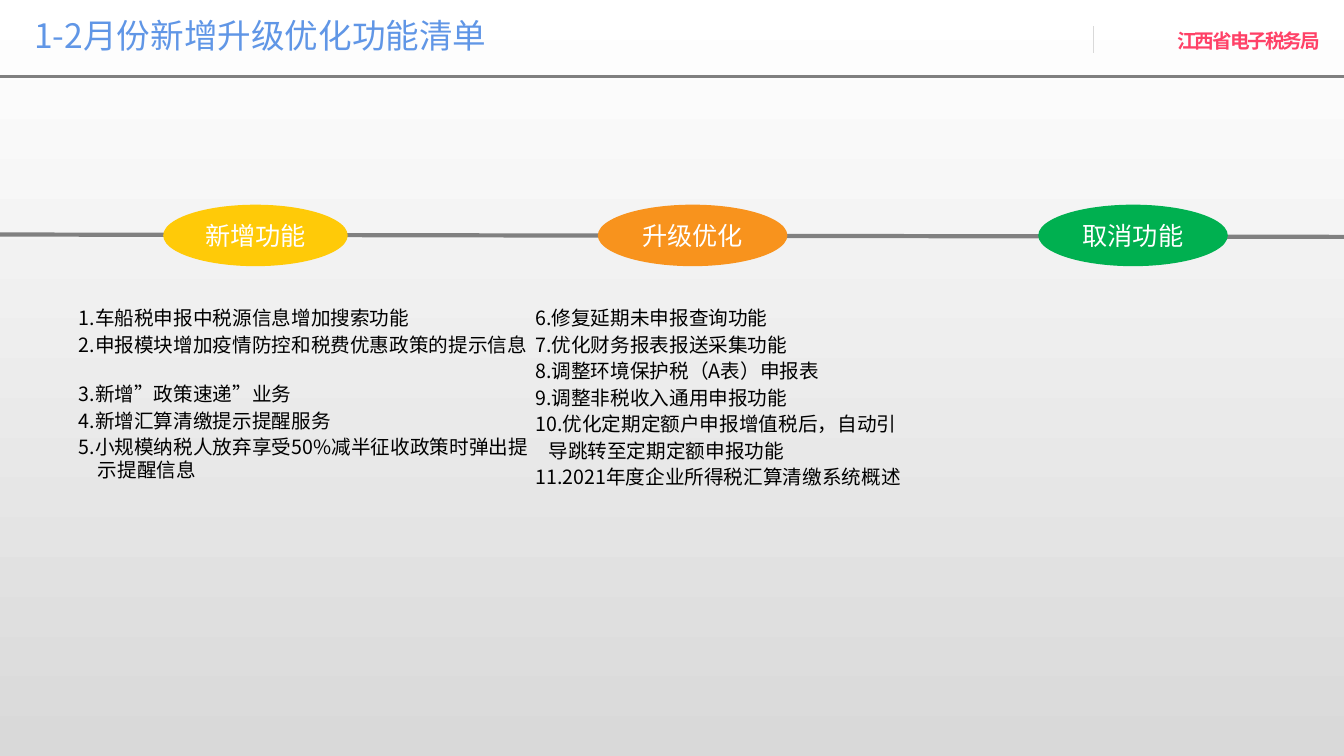
"""Build the list slide of features added and upgraded in January and February."""
from pptx import Presentation
from pptx.dml.color import RGBColor
from pptx.enum import shapes, text
from pptx.oxml import xmlchemy
from pptx.util import Pt

BLUE = RGBColor(0x60, 0x96, 0xE6)
PINK = RGBColor(0xFF, 0x41, 0x67)
YELLOW = RGBColor(0xFF, 0xCA, 0x08)
ORANGE = RGBColor(0xF8, 0x93, 0x1D)
GREEN = RGBColor(0x00, 0xB0, 0x50)
GRAY = RGBColor(0x80, 0x80, 0x80)
LIGHT_GRAY = RGBColor(0xD9, 0xD9, 0xD9)
WHITE = RGBColor(0xFF, 0xFF, 0xFF)
BLACK = RGBColor(0, 0, 0)
CJK_FONT = "Noto Sans CJK SC"

TITLE = "1-2月份新增升级优化功能清单"
OFFICE = "江西省电子税务局"
LINES = [
    ((0, 54.7), (960, 54.7), GRAY, 2),
    ((781.2, 18.7), (781.2, 38.2), LIGHT_GRAY, 0.5),
    ((-3.6, 167.5), (960, 169.2), GRAY, 3),
]
STAGES = [
    ("新增功能", 116.6, 131.8, YELLOW),
    ("升级优化", 427, 135.4, ORANGE),
    ("取消功能", 741.6, 135.4, GREEN),
]
HANGING = (13.7, -13.7)
CONTINUED = (9.4, 0)
GAP = 2.6
WIDE_GAP = 19
LISTS = [
    (49, 340.6, 5, [
        ("1.车船税申报中税源信息增加搜索功能", HANGING, GAP),
        ("2.申报模块增加疫情防控和税费优惠政策的提示信息", HANGING, WIDE_GAP),
        ("3.新增”政策速递”业务", HANGING, GAP),
        ("4.新增汇算清缴提示提醒服务", HANGING, GAP),
        ("5.小规模纳税人放弃享受50%减半征收政策时弹出提示提醒信息", HANGING, GAP),
    ]),
    (375.1, 285.8, 7.2, [
        ("6.修复延期未申报查询功能", HANGING, GAP),
        ("7.优化财务报表报送采集功能", HANGING, GAP),
        ("8.调整环境保护税（A表）申报表", HANGING, GAP),
        ("9.调整非税收入通用申报功能", HANGING, GAP),
        ("10.优化定期定额户申报增值税后，自动引", HANGING, GAP),
        ("导跳转至定期定额申报功能", CONTINUED, GAP),
        ("11.2021年度企业所得税汇算清缴系统概述", HANGING, GAP),
    ]),
]


def place(shape, left, top, width, height):
    shape.left, shape.top = Pt(left), Pt(top)
    shape.width, shape.height = Pt(width), Pt(height)


def set_insets(frame, left, top, right, bottom):
    frame.margin_left, frame.margin_top = Pt(left), Pt(top)
    frame.margin_right, frame.margin_bottom = Pt(right), Pt(bottom)


def set_font(paragraph, name, size, color, bold=False):
    font = paragraph.font
    font.name, font.size, font.bold = name, Pt(size), bold
    font.color.rgb = color


def add_line(slide, start, end, color, width):
    line = slide.shapes.add_connector(
        shapes.MSO_CONNECTOR.STRAIGHT, *map(Pt, start), *map(Pt, end))
    line.line.color.rgb = color
    line.line.width = Pt(width)
    properties = line._element.spPr
    properties.append(xmlchemy.OxmlElement("a:effectLst"))


def add_stage(slide, label, left, width, color):
    ellipse = slide.shapes.add_shape(
        shapes.MSO_SHAPE.OVAL, Pt(left), Pt(146.2), Pt(width), Pt(43.9))
    ellipse.shadow.inherit = False
    ellipse.fill.solid()
    ellipse.fill.fore_color.rgb = color
    ellipse.line.fill.background()
    frame = ellipse.text_frame
    set_insets(frame, 0, 0, 0, 0)
    frame.vertical_anchor = text.MSO_ANCHOR.MIDDLE
    paragraph = frame.paragraphs[0]
    paragraph.text = label
    paragraph.alignment = text.PP_ALIGN.CENTER
    set_font(paragraph, "Arial", 18, WHITE)


def fill_list(placeholder, left, width, right_inset, items):
    place(placeholder, left, 215.3, width, 208.1)
    frame = placeholder.text_frame
    set_insets(frame, 7.2, 3.6, right_inset, 3.6)
    frame.word_wrap = True
    frame.auto_size = text.MSO_AUTO_SIZE.NONE
    for index, (wording, (margin, indent), gap) in enumerate(items):
        paragraph = frame.add_paragraph() if index else frame.paragraphs[0]
        paragraph.text = wording
        paragraph.space_before = Pt(0)
        paragraph.space_after = Pt(gap)
        paragraph.line_spacing = Pt(16.4)
        properties = paragraph._p.get_or_add_pPr()
        properties.set("marL", str(Pt(margin)))
        properties.set("indent", str(Pt(indent)))
        properties.append(xmlchemy.OxmlElement("a:buNone"))
        set_font(paragraph, CJK_FONT, 14, BLACK)


def fill_title(title):
    place(title, 20.9, 5, 389.5, 40.3)
    frame = title.text_frame
    set_insets(frame, 3.6, 3.6, 3.6, 3.6)
    frame.auto_size = text.MSO_AUTO_SIZE.NONE
    frame.vertical_anchor = text.MSO_ANCHOR.MIDDLE
    paragraph = frame.paragraphs[0]
    paragraph.text = TITLE
    paragraph.alignment = text.PP_ALIGN.LEFT
    set_font(paragraph, CJK_FONT, 24, BLUE)


def add_office(slide):
    box = slide.shapes.add_textbox(Pt(831.6), Pt(15.8), Pt(157.7), Pt(26.6))
    frame = box.text_frame
    frame.word_wrap = True
    set_insets(frame, 9.4, 5, 9.4, 5)
    paragraph = frame.paragraphs[0]
    run = paragraph.add_run()
    run.text = OFFICE
    set_font(paragraph, "Montserrat", 14, PINK, bold=True)
    run._r.get_or_add_rPr().set("spc", "-150")


def main():
    presentation = Presentation()
    presentation.slide_width, presentation.slide_height = Pt(960), Pt(540)
    slide = presentation.slides.add_slide(presentation.slide_layouts[3])
    background = slide.background.fill
    background.gradient()
    background.gradient_angle = 270
    for stop, color, position in zip(background.gradient_stops, (WHITE, LIGHT_GRAY), (0, 1)):
        stop.color.rgb = color
        stop.position = position
    title, *bodies = slide.placeholders
    fill_title(title)
    for body, column in zip(bodies, LISTS):
        fill_list(body, *column)
    for line in LINES:
        add_line(slide, *line)
    for stage in STAGES:
        add_stage(slide, *stage)
    add_office(slide)
    presentation.save("out.pptx")


if __name__ == "__main__":
    main()
